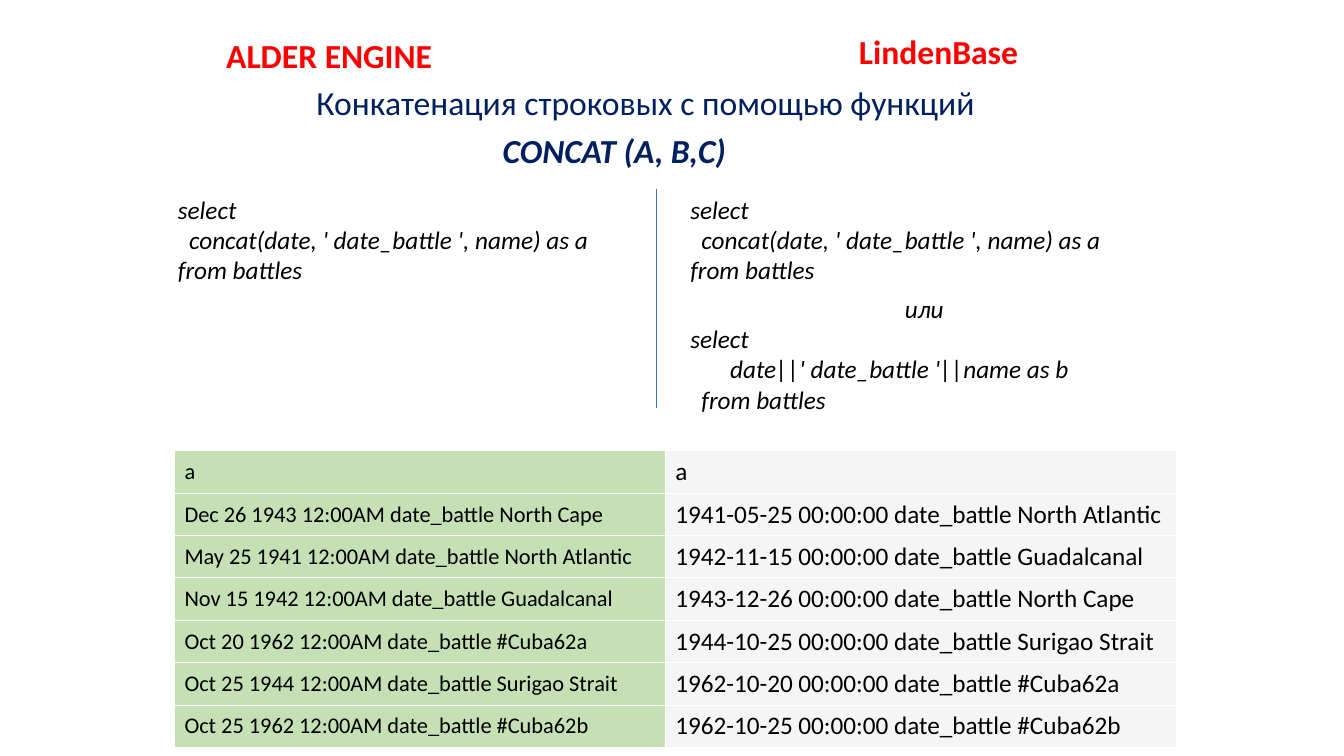
import pptx
import pptx.dml.color
import pptx.enum.shapes
import pptx.enum.text
import pptx.oxml
import pptx.oxml.ns
import pptx.util

Pt = pptx.util.Pt
RGBColor = pptx.dml.color.RGBColor
ALIGN = pptx.enum.text.PP_ALIGN

RED = RGBColor(0xFF, 0x00, 0x00)
NAVY = RGBColor(0x00, 0x20, 0x60)
BLACK = RGBColor(0x00, 0x00, 0x00)
BLUE = RGBColor(0x44, 0x72, 0xC4)
GREEN = RGBColor(0xC5, 0xE0, 0xB4)
GREY = RGBColor(0xF5, 0xF5, 0xF5)

ROW_HEIGHT = 30.3
RESULTS_TOP = 322
CODE_TOP = 135.2

CONCAT_QUERY = [("select", 0), ("concat(date, ' date_battle ', name) as a", 8), ("from battles", 0)]
PIPE_QUERY = [("select", 0), ("date||' date_battle '||name as b", 28.5), ("from battles", 8)]

LEFT_RESULTS = [
    "a",
    "Dec 26 1943 12:00AM date_battle North Cape",
    "May 25 1941 12:00AM date_battle North Atlantic",
    "Nov 15 1942 12:00AM date_battle Guadalcanal",
    "Oct 20 1962 12:00AM date_battle #Cuba62a",
    "Oct 25 1944 12:00AM date_battle Surigao Strait",
    "Oct 25 1962 12:00AM date_battle #Cuba62b",
]
RIGHT_RESULTS = [
    "a",
    "1941-05-25 00:00:00 date_battle North Atlantic",
    "1942-11-15 00:00:00 date_battle Guadalcanal",
    "1943-12-26 00:00:00 date_battle North Cape",
    "1944-10-25 00:00:00 date_battle Surigao Strait",
    "1962-10-20 00:00:00 date_battle #Cuba62a",
    "1962-10-25 00:00:00 date_battle #Cuba62b",
]


def set_font(paragraph, size, color, bold=False, italic=False):
    """Style a whole paragraph."""
    font = paragraph.font
    font.name = "Calibri"
    font.size = Pt(size)
    font.color.rgb = color
    font.bold = bold
    font.italic = italic


def add_heading(slide, text, left, top, width, color, bold=True, italic=False):
    """Add a one-line heading."""
    box = slide.shapes.add_textbox(Pt(left), Pt(top), Pt(width), Pt(36))
    box.text_frame.word_wrap = False
    box.text_frame.auto_size = pptx.enum.text.MSO_AUTO_SIZE.SHAPE_TO_FIT_TEXT
    heading = box.text_frame.paragraphs[0]
    heading.text = text
    set_font(heading, 24, color, bold, italic)


def add_query(slide, lines, left, top, width, lead=None):
    """Add indented query lines, with an optional centred lead line."""
    all_lines = ([(lead, 0)] if lead else []) + lines
    box = slide.shapes.add_textbox(Pt(left), Pt(top), Pt(width), Pt(7.2 + 21.8 * len(all_lines)))
    frame = box.text_frame
    frame.word_wrap = True
    for index, (text, indent) in enumerate(all_lines):
        line = frame.add_paragraph() if index else frame.paragraphs[0]
        line.text = text
        set_font(line, 18, BLACK, italic=True)
        if indent:
            line._p.get_or_add_pPr().set("marL", str(Pt(indent)))
    if lead:
        frame.paragraphs[0].alignment = ALIGN.CENTER


def add_divider(slide, x, top, bottom):
    """Add the thin vertical line between the two dialects."""
    divider = slide.shapes.add_connector(
        pptx.enum.shapes.MSO_CONNECTOR.STRAIGHT, Pt(x), Pt(top), Pt(x), Pt(bottom))
    divider.line.color.rgb = BLUE
    divider.line.width = Pt(0.5)
    divider._element.spPr.append(
        pptx.oxml.parse_xml(f"<a:effectLst {pptx.oxml.ns.nsdecls('a')}/>"))


def set_borders(cell):
    """Give a cell thin white borders."""
    properties = cell._tc.get_or_add_tcPr()
    for index, side in enumerate(("lnL", "lnR", "lnT", "lnB")):
        properties.insert(index, pptx.oxml.parse_xml(
            f'<a:{side} {pptx.oxml.ns.nsdecls("a")} w="{Pt(0.75)}"><a:solidFill>'
            f'<a:srgbClr val="FFFFFF"/></a:solidFill></a:{side}>'))


def add_results(slide, rows, left, width, size, fill):
    """Add a one-column table of query results."""
    table = slide.shapes.add_table(
        len(rows), 1, Pt(left), Pt(RESULTS_TOP), Pt(width), Pt(ROW_HEIGHT * len(rows))).table
    table.first_row = table.horz_banding = False
    for index, text in enumerate(rows):
        table.rows[index].height = Pt(ROW_HEIGHT)
        cell = table.cell(index, 0)
        cell.text = text
        cell.vertical_anchor = pptx.enum.text.MSO_ANCHOR.MIDDLE
        cell.fill.solid()
        cell.fill.fore_color.rgb = fill
        set_font(cell.text_frame.paragraphs[0], size, BLACK)
        set_borders(cell)


def main():
    """Build the slide and save it."""
    deck = pptx.Presentation()
    deck.slide_width, deck.slide_height = Pt(960), Pt(540)
    slide = deck.slides.add_slide(deck.slide_layouts[6])

    add_heading(slide, "ALDER ENGINE", 154.5, 21.6, 172.5, RED)
    add_heading(slide, "CONCAT (A, B,C)", 352, 89.5, 175.5, NAVY, italic=True)
    add_heading(slide, "LindenBase", 606.5, 18.7, 128, RED)
    add_heading(slide, "Конкатенация строковых c помощью функций", 219, 55, 515.5, NAVY, bold=False)

    add_query(slide, CONCAT_QUERY, 120, CODE_TOP, 328)
    add_query(slide, CONCAT_QUERY, 486, CODE_TOP, 335)
    add_query(slide, PIPE_QUERY, 486, 206, 348.5, lead="или")
    add_divider(slide, 469, CODE_TOP, 291.5)

    add_results(slide, LEFT_RESULTS, 124.6, 350.6, 16, GREEN)
    add_results(slide, RIGHT_RESULTS, 475.2, 365, 18, GREY)
    deck.save("out.pptx")


if __name__ == "__main__":
    main()
